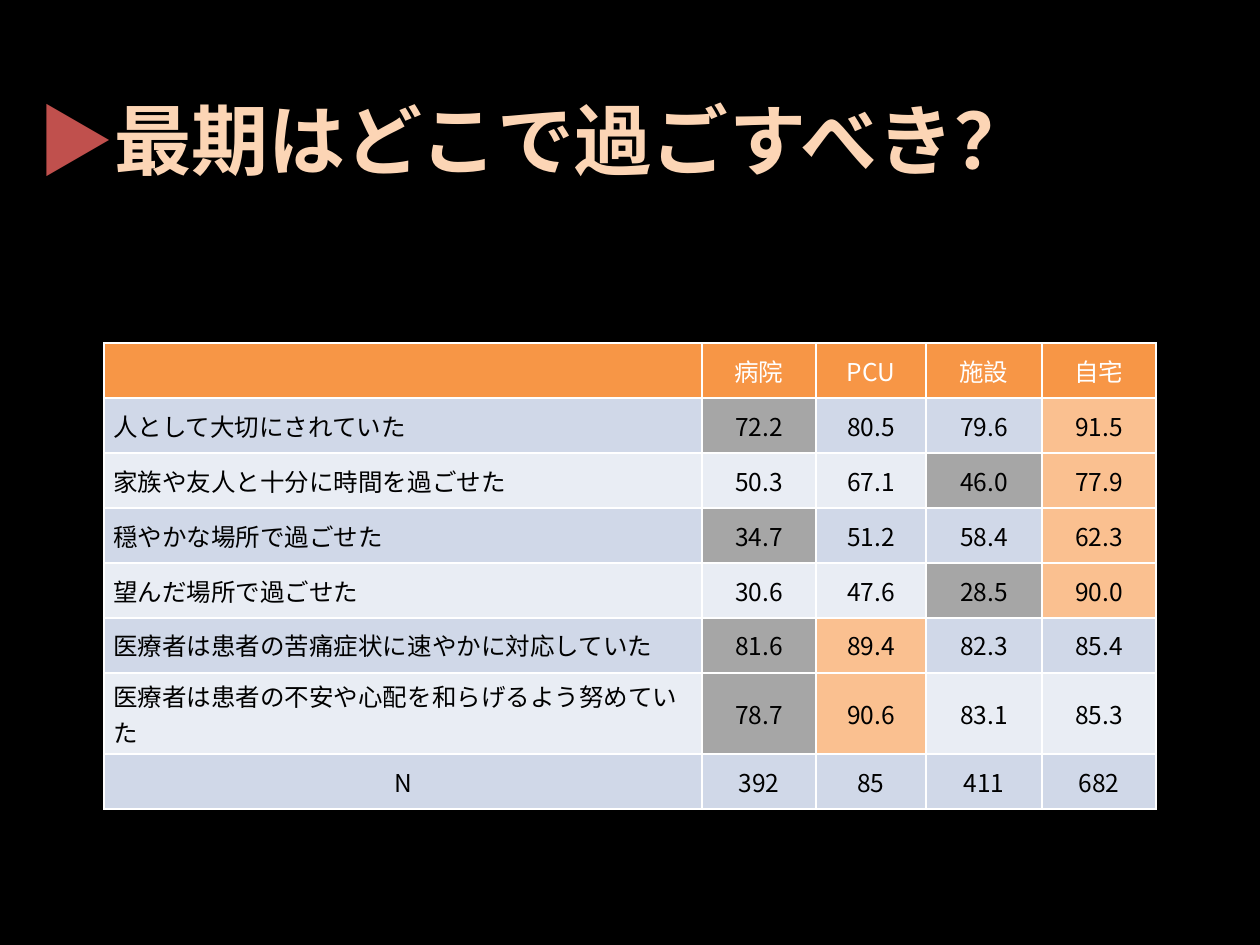
from lxml import etree
from pptx import Presentation
from pptx.dml.color import RGBColor
from pptx.enum.text import MSO_ANCHOR, MSO_AUTO_SIZE, PP_ALIGN
from pptx.oxml.ns import qn
from pptx.util import Emu, Pt

MIDDLE = MSO_ANCHOR.MIDDLE
TOP = MSO_ANCHOR.TOP
NONE = MSO_AUTO_SIZE.NONE
LEFT = PP_ALIGN.LEFT
CENTER = PP_ALIGN.CENTER

BLACK = RGBColor(0x00, 0x00, 0x00)
WHITE = RGBColor(0xFF, 0xFF, 0xFF)
RED = RGBColor(0xC0, 0x50, 0x4D)
PEACH = RGBColor(0xFC, 0xD5, 0xB5)
ORANGE = RGBColor(0xF7, 0x96, 0x46)
BEST = RGBColor(0xFA, 0xC0, 0x90)
WORST = RGBColor(0xA6, 0xA6, 0xA6)
BANDS = [RGBColor(0xE9, 0xED, 0xF4), RGBColor(0xD0, 0xD8, 0xE8)]
FONT = "Noto Sans CJK JP"


def px(n):
    return Emu(n * 914400 // 126)


def style(run, size, color, bold=False):
    font = run.font
    font.name, font.size, font.bold = FONT, Pt(size), bold
    font.color.rgb = color
    etree.SubElement(run._r.get_or_add_rPr(), qn("a:ea"), typeface=FONT)


deck = Presentation()
deck.slide_width, deck.slide_height = px(1260), px(945)
slide = deck.slides.add_slide(deck.slide_layouts[5])
slide.background.fill.solid()
slide.background.fill.fore_color.rgb = BLACK

title = slide.shapes.title
title.left, title.top, title.width, title.height = px(25), px(86), px(1036), px(106)
frame = title.text_frame
frame.word_wrap = False
frame.auto_size = NONE
frame.vertical_anchor = TOP
para = frame.paragraphs[0]
para.alignment = LEFT
for text, color, bold in [("▶", RED, False), ("最期はどこで過ごすべき？", PEACH, True)]:
    run = para.add_run()
    run.text = text
    style(run, 44, color, bold)

rows = [
    ["", "病院", "PCU", "施設", "自宅"],
    ["人として大切にされていた", "72.2", "80.5", "79.6", "91.5"],
    ["家族や友人と十分に時間を過ごせた", "50.3", "67.1", "46.0", "77.9"],
    ["穏やかな場所で過ごせた", "34.7", "51.2", "58.4", "62.3"],
    ["望んだ場所で過ごせた", "30.6", "47.6", "28.5", "90.0"],
    ["医療者は患者の苦痛症状に速やかに対応していた", "81.6", "89.4", "82.3", "85.4"],
    ["医療者は患者の不安や心配を和らげるよう努めていた", "78.7", "90.6", "83.1", "85.3"],
    ["N", "392", "85", "411", "682"],
]
widths = [598, 114, 110, 116, 114]
high = 55
last = len(rows) - 1
grid = slide.shapes.add_table(
    len(rows), len(widths), px(104), px(343), px(sum(widths)), px(high * len(rows))
).table
for col, width in zip(grid.columns, widths):
    col.width = px(width)

for i, row in enumerate(rows):
    grid.rows[i].height = px(high)
    scores = row[1:] if 0 < i < last else []
    for j, text in enumerate(row):
        cell = grid.cell(i, j)
        cell.text = text
        cell.vertical_anchor = MIDDLE
        cell.margin_left = cell.margin_right = px(9)
        cell.margin_top = cell.margin_bottom = px(5)
        para = cell.text_frame.paragraphs[0]
        para.alignment = LEFT if j == 0 and i < last else CENTER
        for run in para.runs:
            style(run, 14, BLACK if i else WHITE)

        props = cell._tc.get_or_add_tcPr()
        for side in ("a:lnL", "a:lnR", "a:lnT", "a:lnB"):
            line = etree.SubElement(props, qn(side), w=str(Pt(1)))
            fill = etree.SubElement(line, qn("a:solidFill"))
            etree.SubElement(fill, qn("a:srgbClr"), val=str(WHITE))

        color = BANDS[i % 2] if i else ORANGE
        if text in scores:
            if text == max(scores, key=float):
                color = BEST
            elif text == min(scores, key=float):
                color = WORST
        cell.fill.solid()
        cell.fill.fore_color.rgb = color

deck.save("out.pptx")
